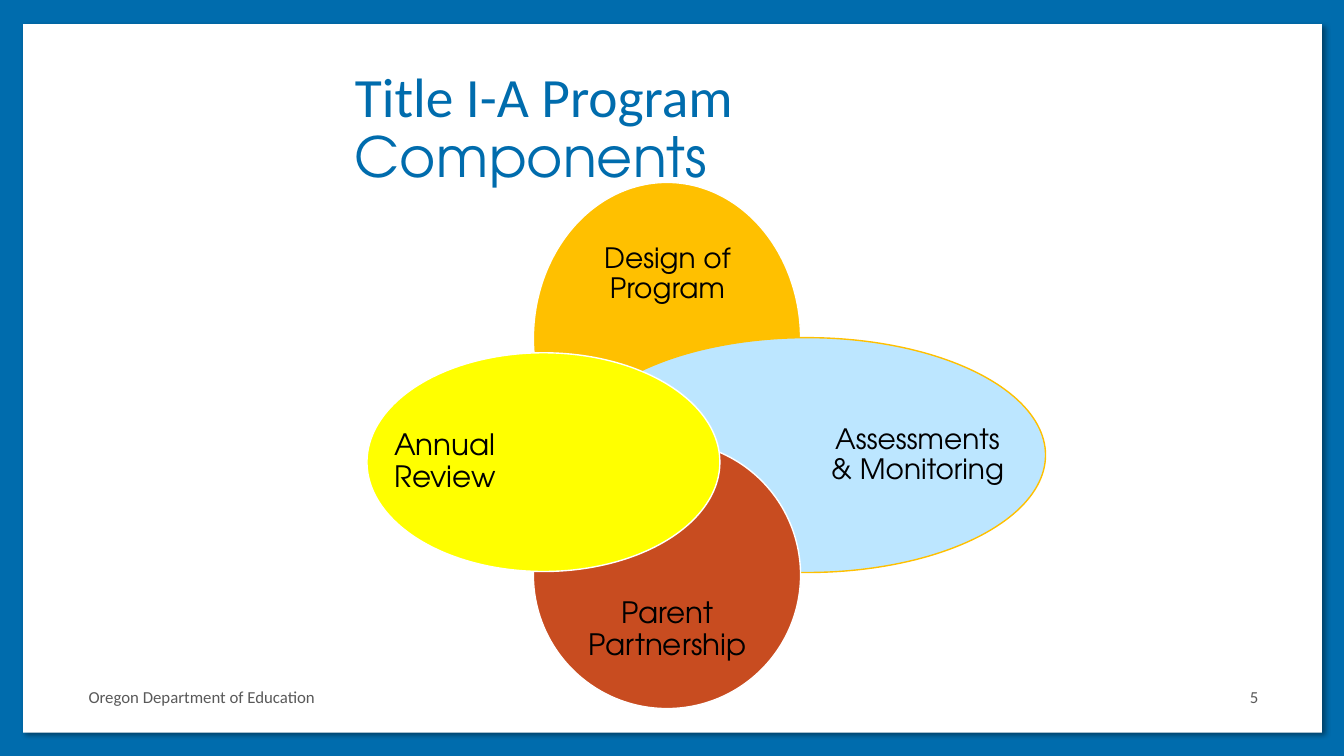
from dataclasses import dataclass

from lxml.etree import SubElement
from pptx import Presentation
from pptx.dml.color import RGBColor
from pptx.enum.shapes import MSO_SHAPE as Shape
from pptx.enum.text import MSO_ANCHOR as Anchor, MSO_AUTO_SIZE as Fit, PP_ALIGN as Align
from pptx.oxml.ns import qn
from pptx.util import Inches, Pt

Box = tuple[float, float, float, float]

BLUE, WHITE, BLACK, GREY = "006CAD", "FFFFFF", "000000", "595959"
AMBER, SKY, RUST, YELLOW = "FFC000", "BCE6FF", "C84C20", "FFFF00"
SANS, ROUND = "Calibri", "TeX Gyre Adventor"


@dataclass
class Petal:
    text: str
    oval: Box
    label: Box
    fill: str
    line: str = WHITE
    size: float = 20
    align: Align = Align.CENTER


PETALS = [
    Petal("Design of Program", (5.29, 1.81, 2.65, 3.1), (5.6, 2.23, 2.04, 0.98), AMBER),
    Petal("Assessments & Monitoring", (5.64, 3.35, 4.73, 2.33), (8.19, 3.62, 1.82, 1.8),
          SKY, line=AMBER),
    Petal("Parent Partnership", (5.29, 4.38, 2.65, 2.65), (5.6, 5.83, 2.04, 0.84),
          RUST, size=21),
    Petal("Annual Review", (3.64, 3.5, 3.5, 2.17), (3.91, 3.75, 1.35, 1.67),
          YELLOW, size=21, align=Align.JUSTIFY),
]


def paint(part, color: str) -> None:
    """Give a fill or a line a solid colour."""
    part.solid()
    part.fore_color.rgb = RGBColor.from_string(color)


def place(shape, box: Box) -> None:
    shape.left, shape.top, shape.width, shape.height = map(Inches, box)


def write(shape, *runs: tuple[str, str], size: float, color: str, align: Align = Align.LEFT,
          anchor: Anchor = Anchor.MIDDLE, space: float = 1.0, inset: bool = True) -> None:
    """Fill a shape with one paragraph of (text, font) runs."""
    frame = shape.text_frame
    frame.word_wrap = True
    frame.auto_size = Fit.NONE
    frame.vertical_anchor = anchor
    if not inset:
        frame.margin_left = frame.margin_top = frame.margin_right = frame.margin_bottom = 0
    para = frame.paragraphs[0]
    para.alignment = align
    para.line_spacing = space
    for text, face in runs:
        run = para.add_run()
        run.text = text
        run.font.name = face
        run.font.size = Pt(size)
        run.font.color.rgb = RGBColor.from_string(color)


def draw(shapes, kind: Shape, box: Box, fill: str, line: str | None = None):
    shape = shapes.add_shape(kind, *map(Inches, box))
    shape.shadow.inherit = False
    paint(shape.fill, fill)
    if line:
        paint(shape.line.fill, line)
        shape.line.width = Pt(1)
    else:
        shape.line.fill.background()
    return shape


def shade(shape) -> None:
    """Cast a soft shadow down and to the right."""
    effect = shape.element.spPr.find(qn("a:effectLst"))
    outer = SubElement(effect, qn("a:outerShdw"), blurRad=str(Pt(4)), dist=str(Pt(3)),
                       dir=str(45 * 60000), algn="tl", rotWithShape="0")
    tint = SubElement(outer, qn("a:srgbClr"), val=BLACK)
    SubElement(tint, qn("a:alpha"), val="40000")


def main() -> None:
    deck = Presentation()
    deck.slide_width, deck.slide_height = Inches(13.33), Inches(7.5)
    slide = deck.slides.add_slide(deck.slide_layouts[5])
    paint(slide.background.fill, BLUE)

    # White panel, behind the title
    title = slide.shapes.title
    panel = draw(slide.shapes, Shape.RECTANGLE, (0.23, 0.24, 12.88, 7.03), WHITE)
    shade(panel)
    title.element.addprevious(panel.element)

    # Title
    place(title, (3.42, 1.12, 6.69, 0.81))
    write(title, ("Title I-A Program ", SANS), ("Components", ROUND),
          size=39.6, color=BLUE, anchor=Anchor.BOTTOM, space=0.9)

    # Overlapping petals with their labels
    group = slide.shapes.add_group_shape()
    for petal in PETALS:
        draw(group.shapes, Shape.OVAL, petal.oval, petal.fill, petal.line)
        label = group.shapes.add_textbox(*map(Inches, petal.label))
        write(label, (petal.text, ROUND), size=petal.size, color=BLACK,
              align=petal.align, space=0.9, inset=False)

    # Footer and page number
    for text, box, align in [
        ("Oregon Department of Education", (0.78, 6.71, 3.13, 0.4), Align.LEFT),
        ("5", (9.42, 6.71, 3.16, 0.4), Align.RIGHT),
    ]:
        foot = slide.shapes.add_textbox(*map(Inches, box))
        write(foot, (text, SANS), size=12, color=GREY, align=align)

    deck.save("out.pptx")


if __name__ == "__main__":
    main()
